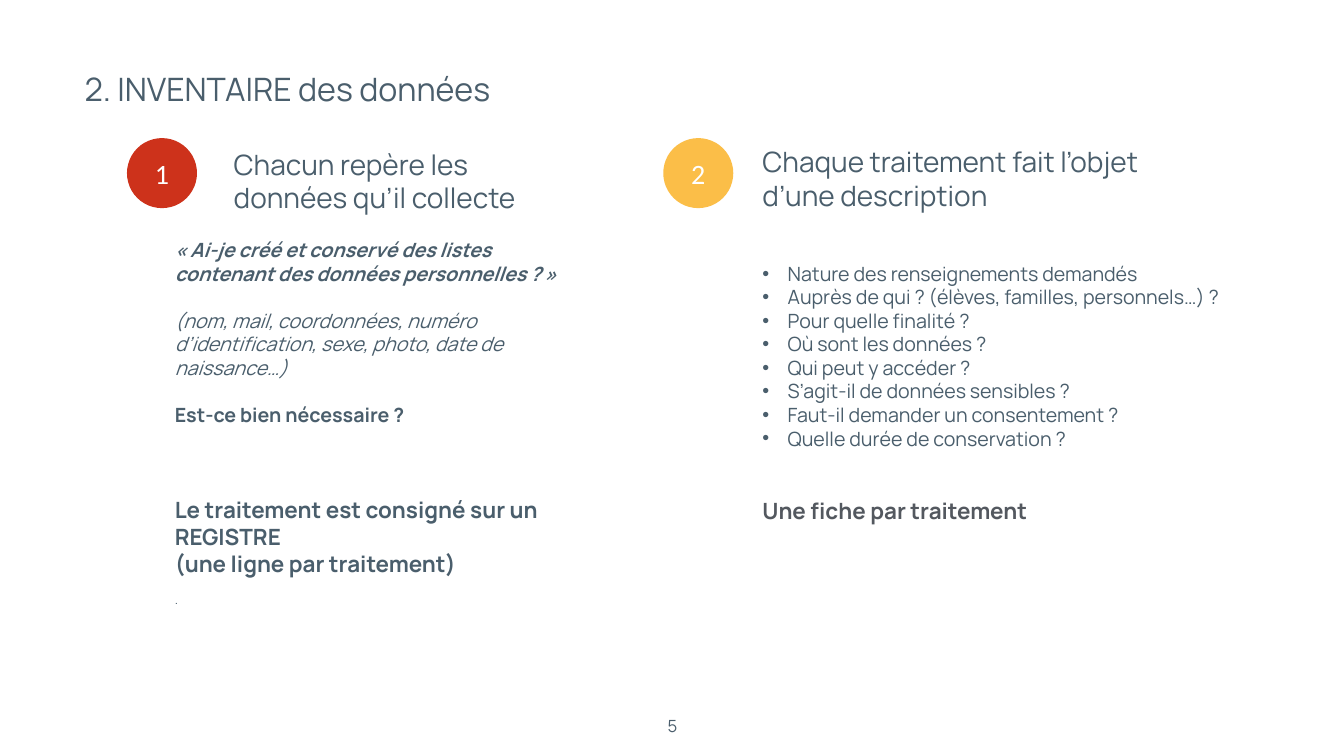
import pptx
import pptx.dml.color
import pptx.enum.shapes
import pptx.enum.text
import pptx.oxml
import pptx.util
from pptx.util import Cm

SLATE = pptx.dml.color.RGBColor(0x4A, 0x5E, 0x6C)
GREY = pptx.dml.color.RGBColor(0x53, 0x58, 0x5F)
RED = pptx.dml.color.RGBColor(0xCD, 0x32, 0x1B)
AMBER = pptx.dml.color.RGBColor(0xFB, 0xBE, 0x48)
WHITE = pptx.dml.color.RGBColor(0xFF, 0xFF, 0xFF)

ANCHOR = pptx.enum.text.MSO_ANCHOR
CENTER = pptx.enum.text.PP_ALIGN.CENTER
CIRCLE_TOP, CIRCLE_SIZE = 6.96, 3.53

QUESTIONS = [
    "Nature des renseignements demandés",
    "Auprès de qui ? (élèves, familles, personnels…) ?",
    "Pour quelle finalité ?",
    "Où sont les données ?",
    "Qui peut y accéder ?",
    "S’agit-il de données sensibles ?",
    "Faut-il demander un consentement ?",
    "Quelle durée de conservation ?",
]


def set_frame(s, anchor):
    tf = s.text_frame
    tf.word_wrap = True
    tf.vertical_anchor = anchor
    tf.margin_left = tf.margin_right = tf.margin_top = tf.margin_bottom = Cm(0.15)
    return tf


def add_box(shapes, left, top, width, height, anchor=ANCHOR.MIDDLE):
    s = shapes.add_textbox(Cm(left), Cm(top), Cm(width), Cm(height))
    return set_frame(s, anchor)


def add_run(p, text, size, color=SLATE, font="Manrope", bold=False, italic=False):
    r = p.add_run()
    r.text = text
    r.font.size = pptx.util.Pt(size)
    r.font.name = font
    r.font.color.rgb = color
    r.font.bold = bold
    r.font.italic = italic


def add_paragraph(tf, text, size, before=0, **style):
    """Fill the first paragraph if it is still empty, else append one."""
    p = tf.paragraphs[0]
    if p.runs:
        p = tf.add_paragraph()
    p.space_before = pptx.util.Pt(before)
    add_run(p, text, size, **style)
    return p


def add_bullet(p):
    pPr = p._p.get_or_add_pPr()
    pPr.set("marL", str(Cm(1.27)))
    pPr.set("indent", str(-Cm(1.27)))
    for tag, key, value in (("buFont", "typeface", "Arial"), ("buChar", "char", "•")):
        bullet = pptx.oxml.xmlchemy.OxmlElement("a:" + tag)
        bullet.set(key, value)
        pPr.append(bullet)


def add_number_circle(shapes, left, number, color):
    s = shapes.add_shape(pptx.enum.shapes.MSO_SHAPE.OVAL, Cm(left), Cm(CIRCLE_TOP),
                         Cm(CIRCLE_SIZE), Cm(CIRCLE_SIZE))
    s.shadow.inherit = False
    s.fill.solid()
    s.fill.fore_color.rgb = color
    s.line.fill.background()
    tf = set_frame(s, ANCHOR.MIDDLE)
    p = add_paragraph(tf, number, 40, color=WHITE, font="Calibri")
    p.alignment = CENTER


def add_collection_step(shapes):
    add_number_circle(shapes, 6.4, "1", RED)
    tf = add_box(shapes, 11.63, 7.72, 18.08, 2.77)
    add_paragraph(tf, "Chacun repère les données qu’il collecte", 40)

    tf = add_box(shapes, 8.66, 11.84, 20.22, 19, ANCHOR.TOP)
    add_paragraph(tf, "«\u00a0Ai-je créé et conservé des listes contenant des données "
                  "personnelles ?\u00a0»".replace("\u00a0", chr(160)),
                  28, bold=True, italic=True)
    add_paragraph(tf, "(nom, mail, coordonnées, numéro d’identification, sexe, photo, "
                  "date de naissance…)", 28, before=33.6, italic=True)
    add_paragraph(tf, "Est-ce bien nécessaire ?", 28, before=33.6, bold=True)
    p = add_paragraph(tf, "Le traitement est consigné sur un REGISTRE", 32,
                      before=100, bold=True)
    p.add_line_break()
    add_run(p, "(une ligne par traitement)", 32, bold=True)
    add_paragraph(tf, ".", 18, before=21.6)


def add_description_step(shapes):
    add_number_circle(shapes, 33.43, "2", AMBER)
    tf = add_box(shapes, 38.28, 6.96, 22.66, 4.04)
    add_paragraph(tf, "Chaque traitement fait l’objet d’une description", 40)

    tf = add_box(shapes, 38.28, 13.04, 24.92, 14.3, ANCHOR.TOP)
    for question in QUESTIONS:
        add_bullet(add_paragraph(tf, question, 28))
    add_paragraph(tf, "Une fiche par traitement", 32, before=67.2, color=GREY, bold=True)


def main():
    prs = pptx.Presentation()
    prs.slide_width, prs.slide_height = Cm(67.74), Cm(38.1)
    slide = prs.slides.add_slide(prs.slide_layouts[6])

    tf = add_box(slide.shapes, 4.11, 3.33, 63.42, 2.26)
    add_paragraph(tf, "2. INVENTAIRE des données", 46)
    add_collection_step(slide.shapes.add_group_shape().shapes)
    add_description_step(slide.shapes.add_group_shape().shapes)

    tf = add_box(slide.shapes, 33.5, 35.94, 0.74, 1.32, ANCHOR.TOP)
    tf.word_wrap = False
    add_paragraph(tf, "5", 24).alignment = CENTER
    prs.save("out.pptx")


if __name__ == "__main__":
    main()
